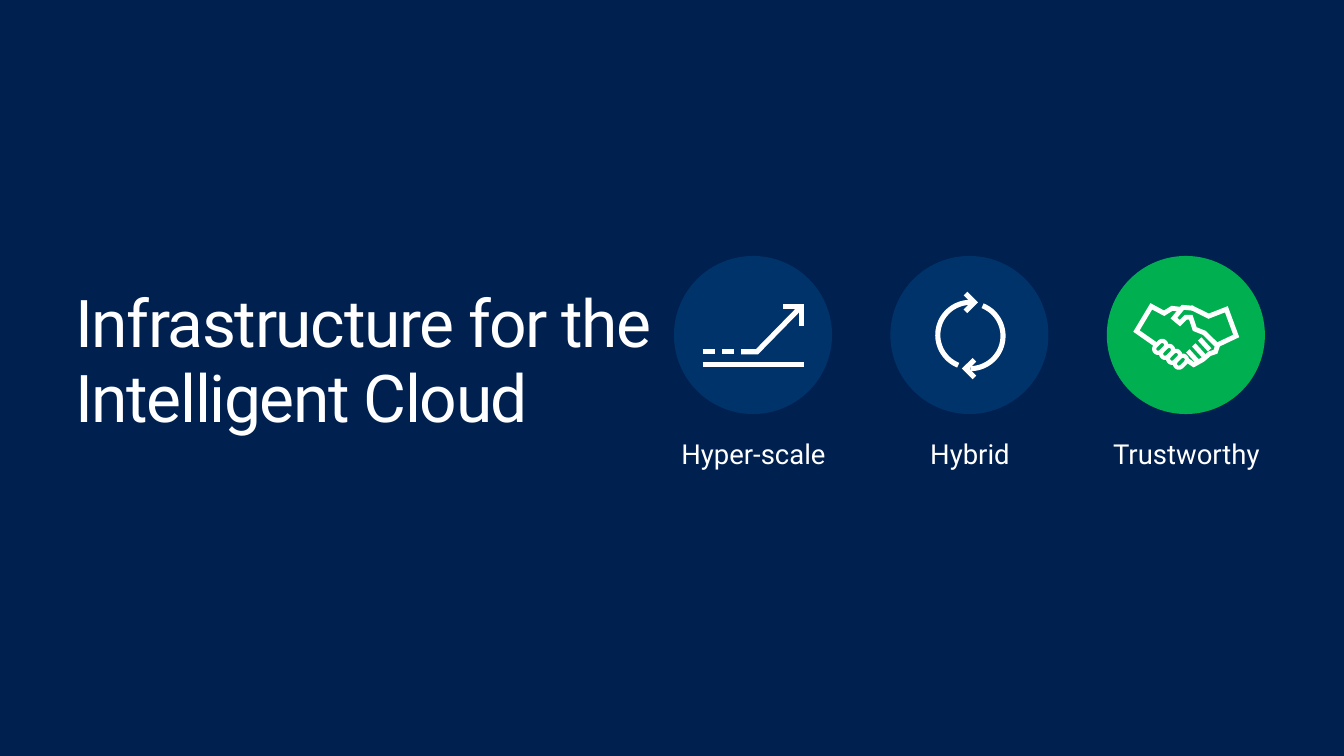
from math import cos, radians, sin

from lxml.etree import SubElement
from pptx import Presentation
from pptx.dml.color import RGBColor
from pptx.enum.shapes import MSO_CONNECTOR, MSO_SHAPE
from pptx.enum.text import MSO_ANCHOR, MSO_AUTO_SIZE, PP_ALIGN
from pptx.oxml.ns import qn
from pptx.util import Inches, Pt

# Content
TITLE = "Infrastructure for the\vIntelligent Cloud"
PILLARS = [("Hyper-scale", "00336A"), ("Hybrid", "00336A"), ("Trustworthy", "00B050")]
FONT, WHITE, NAVY = "Roboto", "FFFFFF", "002050"
LEFT, TOP, SIZE, PITCH = 6.82, 2.59, 1.6, 2.19


def arc(cx, cy, radius, start, end, steps=40):
    angles = [radians(start + (end - start) * i / steps) for i in range(steps + 1)]
    return [(cx + radius * cos(a), cy + radius * sin(a)) for a in angles]


# Icon strokes, in inches on the slide
GROWTH = [
    [(8.11, 3.3), (8.11, 3.1), (7.92, 3.1)],
    [(7.11, 3.56), (7.24, 3.56)],
    [(7.31, 3.56), (7.43, 3.56)],
    [(7.5, 3.56), (7.66, 3.56), (8.11, 3.1)],
    [(7.11, 3.69), (8.14, 3.69)],
]
CYCLE = [
    arc(9.82, 3.4, 0.33, -68, 90),
    arc(9.82, 3.39, 0.33, 112, 270),
    [(9.77, 3.15), (9.86, 3.06), (9.77, 2.97)],
    [(9.82, 3.06), (9.86, 3.06)],
    [(9.86, 3.64), (9.77, 3.73), (9.86, 3.82)],
    [(9.82, 3.73), (9.77, 3.73)],
]
HANDS = [
    # left cuff
    [(11.7, 3.49), (11.5, 3.35), (11.65, 3.1), (11.78, 3.17), (11.86, 3.12), (11.95, 3.13)],
    # thumb and back of the right hand
    [(12.08, 3.12), (11.97, 3.11), (11.88, 3.22), (11.94, 3.27), (12, 3.21), (12.05, 3.21),
     (12.09, 3.33), (12.19, 3.37), (12.32, 3.5), (12.3, 3.56), (12.24, 3.58), (12.17, 3.64),
     (12.08, 3.69), (12.02, 3.65)],
    # right cuff
    [(12.05, 3.11), (12.23, 3.2), (12.41, 3.13), (12.51, 3.4), (12.32, 3.49)],
] + [[(12.14 - 0.06 * i, 3.43 + 0.06 * i), (12.24 - 0.06 * i, 3.54 + 0.06 * i)]
     for i in range(3)]
FINGERS = [(11.74 + 0.07 * i, 3.51 + 0.05 * i) for i in range(4)]
FINGER_LENGTH, FINGER_WIDTH = 0.14, 0.08


def rgb(color):
    return RGBColor.from_string(color)


def set_line(shape, width):
    shape.line.color.rgb = rgb(WHITE)
    shape.line.width = Pt(width)


def style_text(tf, text, size, spacing, align):
    tf.word_wrap = True
    tf.vertical_anchor = MSO_ANCHOR.TOP
    tf.text = text
    p = tf.paragraphs[0]
    p.alignment, p.line_spacing = align, spacing
    p.font.name, p.font.size, p.font.color.rgb = FONT, Pt(size), rgb(WHITE)
    return p


def add_strokes(shapes, strokes, width):
    for points in strokes:
        emu = [(Inches(x), Inches(y)) for x, y in points]
        if len(emu) == 2:
            sp = shapes.add_connector(MSO_CONNECTOR.STRAIGHT, *emu[0], *emu[1])
            set_line(sp, width)
            SubElement(sp._element.spPr, qn("a:effectLst"))
        else:
            builder = shapes.build_freeform(*emu[0], scale=1.0)
            builder.add_line_segments(emu[1:], close=False)
            sp = builder.convert_to_shape()
            sp.shadow.inherit = False
            sp.fill.background()
            set_line(sp, width)
            # Square corners
            SubElement(sp.line._get_or_add_ln(), qn("a:miter"), lim="800000")


def add_fingers(shapes):
    for cx, cy in FINGERS:
        finger = shapes.add_shape(
            MSO_SHAPE.ROUNDED_RECTANGLE,
            Inches(cx - FINGER_LENGTH / 2), Inches(cy - FINGER_WIDTH / 2),
            Inches(FINGER_LENGTH), Inches(FINGER_WIDTH))
        finger.adjustments[0] = 0.5
        finger.rotation = -45
        finger.shadow.inherit = False
        finger.fill.background()
        set_line(finger, 3)


def add_pillar(s, index, label, color):
    shapes = s.shapes.add_group_shape().shapes
    left = LEFT + index * PITCH
    circle = shapes.add_shape(MSO_SHAPE.OVAL, Inches(left), Inches(TOP),
                              Inches(SIZE), Inches(SIZE))
    circle.shadow.inherit = False
    circle.fill.solid()
    circle.fill.fore_color.rgb = rgb(color)
    circle.line.fill.background()
    box = shapes.add_textbox(Inches(left - 0.39), Inches(4.46), Inches(2.39), Inches(0.73))
    tf = box.text_frame
    tf.margin_left = tf.margin_right = tf.margin_top = tf.margin_bottom = 0
    style_text(tf, label, 20, 0.9, PP_ALIGN.CENTER)
    return shapes


def main():
    prs = Presentation()
    prs.slide_width, prs.slide_height = Inches(13.6), Inches(7.65)
    s = prs.slides.add_slide(prs.slide_layouts[5])
    s.background.fill.solid()
    s.background.fill.fore_color.rgb = rgb(NAVY)

    # Title
    title = s.shapes.title
    title.left, title.top = Inches(0.66), Inches(2.86)
    title.width, title.height = Inches(11.58), Inches(1.64)
    p = style_text(title.text_frame, TITLE, 48, 0.95, PP_ALIGN.LEFT)
    p.space_after = Pt(12)
    title.text_frame.auto_size = MSO_AUTO_SIZE.SHAPE_TO_FIT_TEXT
    for r in p.runs:
        r.font._element.set("spc", "-100")

    # Pillars with their icons
    growth, cycle, trust = [add_pillar(s, i, *pillar) for i, pillar in enumerate(PILLARS)]
    add_strokes(growth, GROWTH, 3.75)
    add_strokes(cycle, CYCLE, 3.75)
    add_strokes(trust, HANDS, 3.5)
    add_fingers(trust)

    prs.save("out.pptx")


if __name__ == "__main__":
    main()
